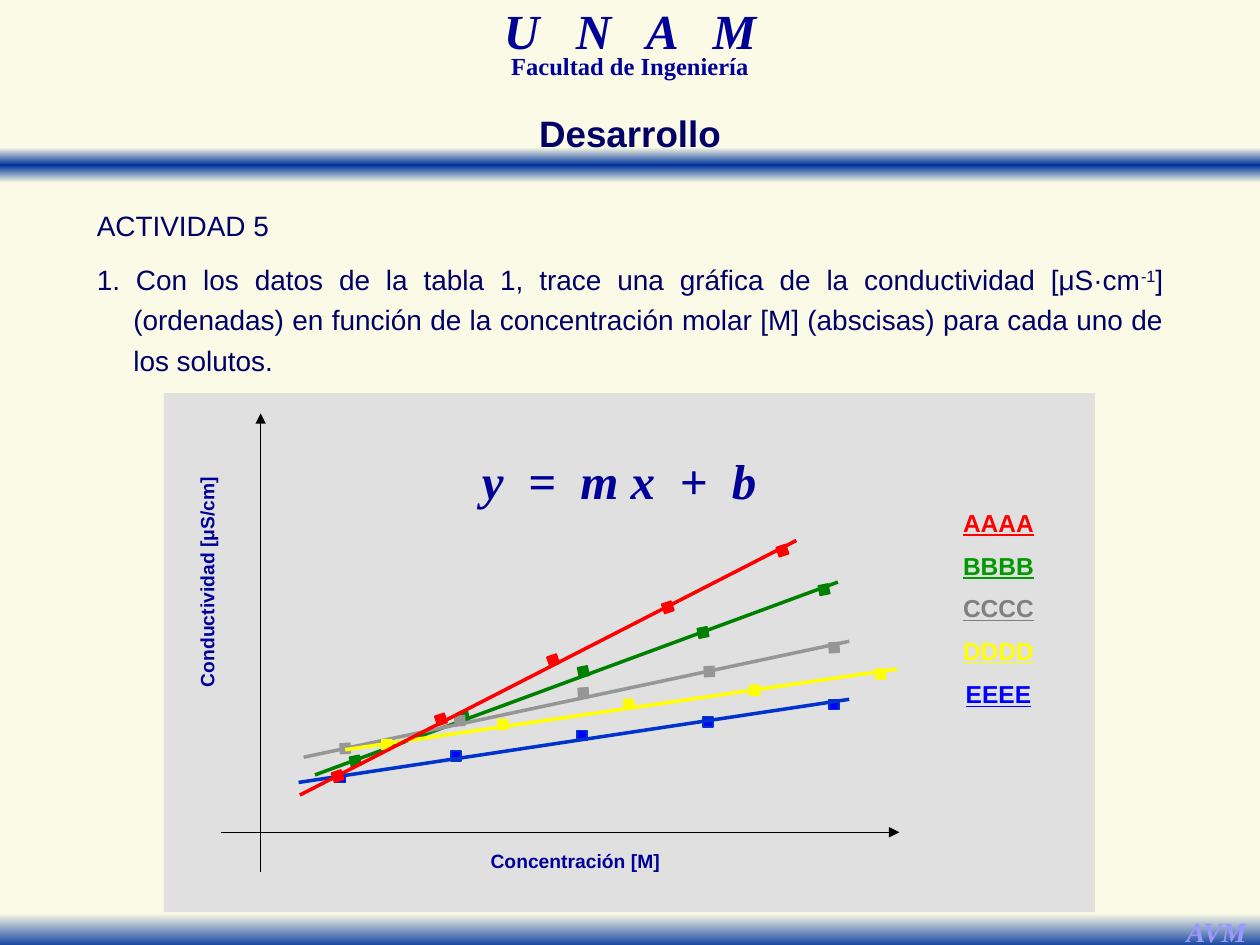
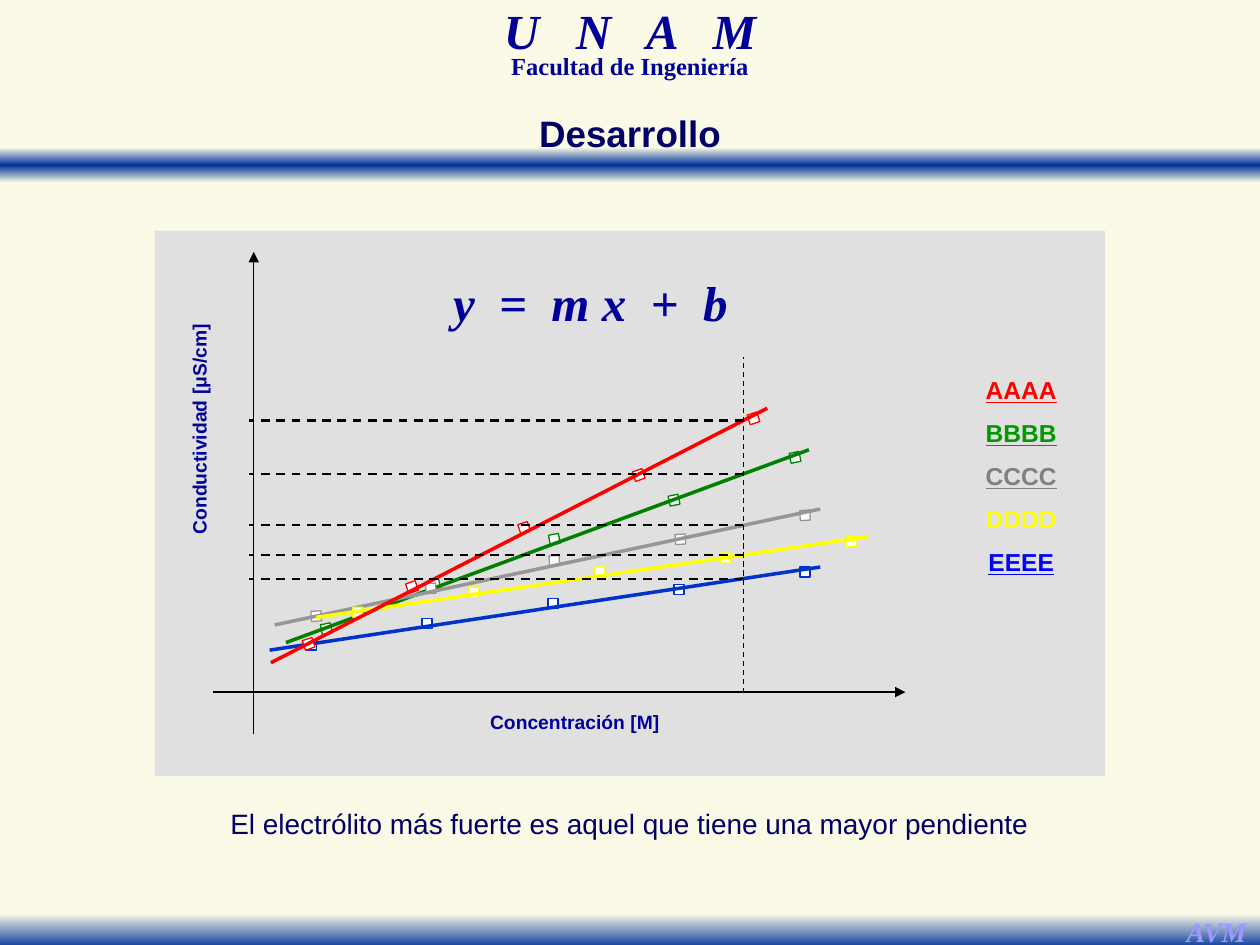
from dataclasses import dataclass
from typing import NamedTuple, Optional, Sequence

from lxml import etree
from pptx import Presentation
from pptx import util as u
from pptx.dml.color import RGBColor
from pptx.enum import dml, shapes, text
from pptx.oxml import ns

Inches, Pt = u.Inches, u.Pt
ALIGN = text.PP_ALIGN


@dataclass(frozen=True)
class Theme:
    paper: str = "FAFAE6"
    band: str = "003399"
    panel: str = "E0E0E0"
    body: str = "000066"
    accent: str = "000099"
    signature: str = "9999FF"
    ink: str = "000000"
    white: str = "FFFFFF"
    sans: str = "Arial"
    serif: str = "Times New Roman"
    display: int = 28
    title: int = 21
    normal: int = 16
    small: int = 14
    axis: int = 11


T = Theme()


class Box(NamedTuple):
    left: float
    top: float
    width: float
    height: float


class Point(NamedTuple):
    x: float
    y: float


@dataclass(frozen=True)
class Series:
    label: str
    label_color: str
    color: str
    fill: str
    tilt: float
    start: Point
    end: Point
    markers: Sequence[tuple]

    def y_at(self, x: float) -> float:
        slope = (self.end.y - self.start.y) / (self.end.x - self.start.x)
        return self.start.y + slope * (x - self.start.x)


MARKER = 0.08
# In legend order; marker positions are their top left corners
SERIES = [
    Series("AAAA", "FF0000", "FF0000", "FF0000", 341.5, Point(2.38, 6.31), Point(6.32, 4.29),
           [(2.64, 6.12), (3.46, 5.67), (4.35, 5.2), (5.26, 4.78), (6.17, 4.33)]),
    Series("BBBB", "009900", "008000", "008000", 348.5, Point(2.5, 6.15), Point(6.65, 4.62),
           [(2.78, 6), (3.64, 5.65), (4.59, 5.29), (5.54, 4.98), (6.5, 4.64)]),
    Series("CCCC", "808080", "969696", "969696", 356.7, Point(2.41, 6.01), Point(6.74, 5.09),
           [(2.7, 5.9), (3.61, 5.68), (4.59, 5.46), (5.59, 5.29), (6.58, 5.1)]),
    Series("DDDD", "FFFF00", "FFFF00", "FFFF00", 0.4, Point(2.74, 5.95), Point(7.12, 5.31),
           [(3.03, 5.87), (3.95, 5.71), (4.95, 5.55), (5.95, 5.44), (6.95, 5.31)]),
    Series("EEEE", "0000FF", "0033CC", "0000FF", 0, Point(2.37, 6.21), Point(6.74, 5.55),
           [(2.66, 6.13), (3.58, 5.96), (4.58, 5.8), (5.58, 5.69), (6.58, 5.55)]),
]
# Back to front
DRAW_ORDER = [SERIES[i] for i in (4, 1, 2, 3, 0)]


def rgb(color: str) -> RGBColor:
    return RGBColor.from_string(color)


def place(box: Box) -> list:
    return [Inches(v) for v in box]


def add_text(s, box: Box, content: str, *, size: int, color: str = T.body,
             colors: Optional[Sequence[str]] = None, font: str = T.sans,
             bold: bool = False, italic: bool = False, underline: bool = False,
             align=ALIGN.CENTER, spacing: Optional[float] = None, before: float = 0,
             after: float = 0, hanging: float = 0, wrap: bool = True,
             rotation: float = 0):
    """Each line is a paragraph; text between carets is superscript."""
    sp = s.shapes.add_textbox(*place(box))
    sp.rotation = rotation
    tf = sp.text_frame
    tf.word_wrap = wrap
    for i, line in enumerate(content.split("\n")):
        p = tf.paragraphs[0] if i == 0 else tf.add_paragraph()
        p.alignment = align
        p.space_before = Pt(before if i else 0)
        p.space_after = Pt(after)
        if spacing:
            p.line_spacing = spacing
        if hanging:
            pPr = p._p.get_or_add_pPr()
            pPr.set("marL", str(Inches(hanging)))
            pPr.set("indent", str(-Inches(hanging)))
        for j, part in enumerate(line.split("^")):
            r = p.add_run()
            r.text = part
            r.font.name, r.font.size = font, Pt(size)
            r.font.bold, r.font.italic, r.font.underline = bold, italic, underline
            r.font.color.rgb = rgb(colors[i] if colors else color)
            if j % 2:
                r._r.get_or_add_rPr().set("baseline", "30000")
    return sp


def add_rect(s, box: Box, fill: str, line: Optional[str] = None, rotation: float = 0):
    sp = s.shapes.add_shape(shapes.MSO_SHAPE.RECTANGLE, *place(box))
    sp.shadow.inherit = False
    sp.rotation = rotation
    sp.fill.solid()
    sp.fill.fore_color.rgb = rgb(fill)
    if line:
        sp.line.color.rgb = rgb(line)
        sp.line.width = Pt(0.75)
    else:
        sp.line.fill.background()
    return sp


def add_band(s, box: Box, colors: Sequence[str]) -> None:
    """Vertical gradient with evenly spaced stops."""
    fill = add_rect(s, box, T.band).fill
    fill.gradient()
    fill.gradient_angle = 270
    stops = fill._fill._gradFill.find(ns.qn("a:gsLst"))
    for old in list(stops):
        stops.remove(old)
    for i, color in enumerate(colors):
        gs = etree.SubElement(stops, ns.qn("a:gs"), pos=str(100000 * i // (len(colors) - 1)))
        etree.SubElement(gs, ns.qn("a:srgbClr"), val=color)


def add_line(s, start: Point, end: Point, color: str = T.ink, width: float = 0.75,
             arrow: bool = False, dashed: bool = False) -> None:
    c = s.shapes.add_connector(shapes.MSO_CONNECTOR.STRAIGHT, *place((*start, *end)))
    c.line.color.rgb = rgb(color)
    c.line.width = Pt(width)
    if dashed:
        c.line.dash_style = dml.MSO_LINE.DASH
    if arrow:
        etree.SubElement(c.line._get_or_add_ln(), ns.qn("a:tailEnd"), type="triangle")
    etree.SubElement(c._element.spPr, ns.qn("a:effectLst"))


def add_frame(prs):
    """New slide with the shared heading, bands, title and signature."""
    s = prs.slides.add_slide(prs.slide_layouts[6])
    s.background.fill.solid()
    s.background.fill.fore_color.rgb = rgb(T.paper)
    add_band(s, Box(0, 1.17, 10, 0.28), [T.paper, T.band, T.paper])
    add_text(s, Box(3.04, 0.08, 3.92, 0.43), "U   N   A   M", size=T.display,
             color=T.accent, font=T.serif, bold=True, italic=True, spacing=0.7)
    add_text(s, Box(3.21, 0.42, 3.58, 0.26), "Facultad de Ingeniería", size=T.small,
             color=T.accent, font=T.serif, bold=True, spacing=0.7)
    add_band(s, Box(0, 7.25, 10, 0.28), [T.paper, T.band])
    add_text(s, Box(9.31, 7.21, 0.69, 0.37), "AVM", size=T.normal, color=T.signature,
             font=T.serif, bold=True, italic=True, wrap=False)
    add_text(s, Box(4.17, 0.83, 1.66, 0.45), "Desarrollo", size=T.title, bold=True,
             wrap=False)
    return s


def add_plot(s, panel: Box, equation: Point, legend: Point, shift: Point = Point(0, 0),
             marker_fill: Optional[str] = None) -> None:
    """Panel, axes, fitted lines, equation and legend."""
    def at(fx: float, fy: float) -> Point:
        return Point(panel.left + fx * panel.width, panel.top + fy * panel.height)

    add_rect(s, panel, T.panel)

    # Axes and their labels, as fractions of the panel
    add_line(s, at(0.104, 0.923), at(0.104, 0.039), arrow=True)
    add_line(s, at(0.061, 0.846), at(0.79, 0.846), arrow=True)
    label = dict(size=T.axis, color=T.accent, bold=True)
    add_text(s, Box(*at(0.337, 0.867), 0.21 * panel.width, 0.27), "Concentración [M]", **label)
    center, length = at(0.046, 0.364), 0.461 * panel.height
    add_text(s, Box(center.x - length / 2, center.y - 0.14, length, 0.28),
             "Conductividad [μS/cm]", rotation=270, **label)

    # Markers under each fitted line
    for series in DRAW_ORDER:
        for x, y in series.markers:
            add_rect(s, Box(x + shift.x, y + shift.y, MARKER, MARKER),
                     marker_fill or series.fill, series.color, series.tilt)
        ends = [Point(p.x + shift.x, p.y + shift.y) for p in (series.start, series.end)]
        add_line(s, *ends, series.color, 2)

    add_text(s, Box(*equation, 4.67, 0.57), "y  =  m x  +  b", size=T.display,
             color=T.accent, font=T.serif, bold=True, italic=True)
    add_text(s, Box(*legend, 0.83, 1.73), "\n".join(v.label for v in SERIES), size=T.small,
             colors=[v.label_color for v in SERIES], bold=True, underline=True, before=7.7)


def build_activity(prs) -> None:
    s = add_frame(prs)
    add_text(s, Box(0.67, 1.55, 8.66, 1.51),
             "ACTIVIDAD 5\n"
             "1. Con los datos de la tabla 1, trace una gráfica de la conductividad "
             "[μS·cm^-1^] (ordenadas) en función de la concentración molar [M] "
             "(abscisas) para cada uno de los solutos.",
             size=T.normal, align=ALIGN.JUSTIFY, spacing=1.2, after=8, hanging=0.29)
    add_plot(s, Box(1.3, 3.12, 7.39, 4.12), Point(2.58, 3.53), Point(7.51, 3.98))


def build_conclusion(prs) -> None:
    s = add_frame(prs)
    shift = Point(-0.23, -1.05)
    add_plot(s, Box(1.23, 1.83, 7.54, 4.33), Point(2.35, 2.11), Point(7.69, 2.93),
             shift, T.white)

    # Readings of every line at one concentration
    guide_x = 5.9
    add_line(s, Point(guide_x, 5.5), Point(guide_x, 2.83), dashed=True)
    for series in SERIES:
        y = series.y_at(guide_x - shift.x) + shift.y
        add_line(s, Point(guide_x, y), Point(1.98, y), width=1.25, dashed=True)

    add_text(s, Box(1.69, 6.35, 6.61, 0.37),
             "El electrólito más fuerte es aquel que tiene una mayor pendiente",
             size=T.normal, wrap=False)


def main() -> None:
    prs = Presentation()
    prs.slide_width, prs.slide_height = Inches(10), Inches(7.5)
    build_activity(prs)
    build_conclusion(prs)
    prs.save("out.pptx")


if __name__ == "__main__":
    main()
